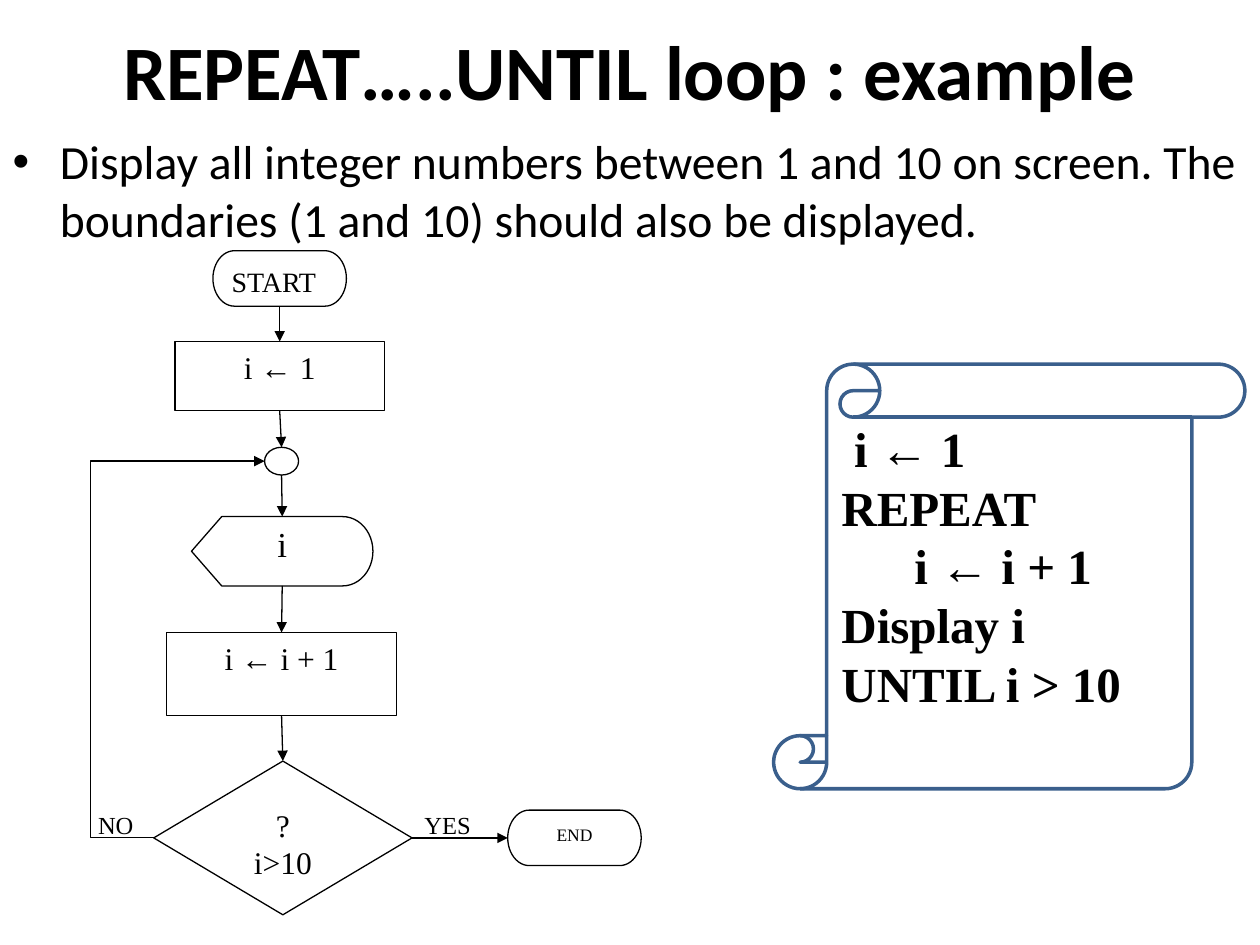
import pptx
import pptx.dml.color
import pptx.enum.shapes
import pptx.enum.text
import pptx.oxml
import pptx.oxml.ns
import pptx.util
from pptx.util import Inches

COLORS = {"ink": "000000", "paper": "FFFFFF", "scroll": "3A5F8C"}
SHAPE = pptx.enum.shapes.MSO_SHAPE
CONNECTOR = pptx.enum.shapes.MSO_CONNECTOR
ALIGN = pptx.enum.text.PP_ALIGN
ANCHOR = pptx.enum.text.MSO_ANCHOR
TOP, LEFT, BOTTOM, RIGHT = range(4)


def color(name):
    return pptx.dml.color.RGBColor.from_string(COLORS[name])


def lengths(box):
    return [Inches(value) for value in box]


def style(para, size, font="Times New Roman", bold=False, align=ALIGN.LEFT):
    para.alignment = align
    para.font.name = font
    para.font.size = pptx.util.Pt(size)
    para.font.bold = bold
    para.font.color.rgb = color("ink")


def add_heading(page, title_box, body_box):
    title, body = page.shapes.title, page.placeholders[1]
    for holder, box in ((title, title_box), (body, body_box)):
        holder.left, holder.top, holder.width, holder.height = lengths(box)
        holder.text_frame.auto_size = pptx.enum.text.MSO_AUTO_SIZE.NONE
    title.text_frame.text = "REPEAT…..UNTIL loop : example"
    title.text_frame.vertical_anchor = ANCHOR.MIDDLE
    style(title.text_frame.paragraphs[0], 44, "Calibri", True, ALIGN.CENTER)
    body.text_frame.text = ("Display all integer numbers between 1 and 10 on screen. "
                            "The boundaries (1 and 10) should also be displayed.")
    style(body.text_frame.paragraphs[0], 27.2, "Calibri")


def add_pseudocode(page, scroll_box, text_box):
    scroll = page.shapes.add_shape(SHAPE.VERTICAL_SCROLL, *lengths(scroll_box))
    scroll.shadow.inherit = False
    scroll.fill.background()
    scroll.line.color.rgb = color("scroll")
    scroll.line.width = pptx.util.Pt(2)

    frame = page.shapes.add_textbox(*lengths(text_box)).text_frame
    frame.word_wrap = True
    lines = [("i ← 1", 0.1), ("REPEAT", 0), ("i ← i + 1", 0.58),
             ("Display i", 0), ("UNTIL i > 10", 0)]
    frame.text = "\n".join(text for text, indent in lines)
    for para, (text, indent) in zip(frame.paragraphs, lines):
        style(para, 28, bold=True)
        para._p.get_or_add_pPr().set("marL", str(Inches(indent)))


def add_node(page, kind, box, text="", size=18, align=ALIGN.CENTER, outlined=True):
    node = page.shapes.add_shape(kind, *lengths(box))
    node.shadow.inherit = False
    node.fill.solid()
    node.fill.fore_color.rgb = color("paper")
    if outlined:
        node.line.color.rgb = color("ink")
        node.line.width = pptx.util.Pt(0.75)
    else:
        node.line.fill.background()
    if text:
        frame = node.text_frame
        frame.vertical_anchor = ANCHOR.TOP
        frame.text = text
        for para in frame.paragraphs:
            style(para, size, align=align)
    return node


def add_arrow(page, start, end, kind=CONNECTOR.STRAIGHT):
    arrow = page.shapes.add_connector(kind, *start, *end)
    arrow.line.color.rgb = color("ink")
    arrow.line.width = pptx.util.Pt(0.75)
    namespace = pptx.oxml.ns.nsdecls("a")
    arrow.line._get_or_add_ln().append(
        pptx.oxml.parse_xml(f'<a:tailEnd {namespace} type="triangle"/>'))
    arrow._element.spPr.append(pptx.oxml.parse_xml(f"<a:effectLst {namespace}/>"))
    return arrow


def side(node, site):
    """Return the middle of one side of a node."""
    across = {LEFT: 0, RIGHT: node.width}.get(site, node.width // 2)
    down = {TOP: 0, BOTTOM: node.height}.get(site, node.height // 2)
    return node.left + across, node.top + down


def join(page, first, first_site, second, second_site):
    arrow = add_arrow(page, side(first, first_site), side(second, second_site))
    # The round junction numbers its sites differently, so it stays unglued
    if first.auto_shape_type != SHAPE.FLOWCHART_CONNECTOR:
        arrow.begin_connect(first, first_site)
    if second.auto_shape_type != SHAPE.FLOWCHART_CONNECTOR:
        arrow.end_connect(second, second_site)


def add_flowchart(page, left, top):
    def node(kind, x, y, width, height, *text, **options):
        return add_node(page, kind, (left + x, top + y, width, height), *text, **options)

    # Branch labels
    for x, label in ((0, "NO"), (2.59, "YES")):
        node(SHAPE.RECTANGLE, x, 4.39, 0.67, 0.39, label, 14,
             align=ALIGN.LEFT, outlined=False)

    # Steps from top to bottom
    start = node(SHAPE.FLOWCHART_TERMINATOR, 1.01, 0, 1.06, 0.44, "START", 16,
                 align=ALIGN.LEFT)
    assign = node(SHAPE.FLOWCHART_PROCESS, 0.71, 0.72, 1.66, 0.55, "i ← 1")
    junction = node(SHAPE.FLOWCHART_CONNECTOR, 1.42, 1.56, 0.27, 0.22)
    display = node(SHAPE.FLOWCHART_DISPLAY, 0.84, 2.11, 1.44, 0.55, "i", 20)
    increment = node(SHAPE.FLOWCHART_PROCESS, 0.64, 3.03, 1.83, 0.66, "i ← i + 1")
    decision = node(SHAPE.FLOWCHART_DECISION, 0.54, 4.05, 2.05, 1.22, "?\ni>10")
    end = node(SHAPE.FLOWCHART_TERMINATOR, 3.35, 4.44, 1.06, 0.44, "END", 10)

    # Downward flow and exit
    steps = [start, assign, junction, display, increment, decision]
    for upper, lower in zip(steps, steps[1:]):
        join(page, upper, BOTTOM, lower, TOP)
    join(page, decision, RIGHT, end, LEFT)

    # Loop back, bending half an inch left of the decision
    loop = add_arrow(page, side(decision, LEFT), side(junction, LEFT), CONNECTOR.ELBOW)
    bend = round(-100000 * Inches(0.5) / loop.width)
    geometry = loop._element.spPr.find(pptx.oxml.ns.qn("a:prstGeom"))
    for old in list(geometry):
        geometry.remove(old)
    geometry.append(pptx.oxml.parse_xml(
        f'<a:avLst {pptx.oxml.ns.nsdecls("a")}><a:gd name="adj1" fmla="val {bend}"/></a:avLst>'))


def main():
    deck = pptx.Presentation()
    deck.slide_width, deck.slide_height = Inches(10), Inches(7.5)
    page = deck.slides.add_slide(deck.slide_layouts[1])
    add_heading(page, (0, -0.07, 10, 1.25), (0, 1, 10, 1.09))
    add_pseudocode(page, (6.14, 2.89, 3.74, 3.37), (6.58, 3.27, 2.8, 3.87))
    add_flowchart(page, 0.68, 1.99)
    deck.save("out.pptx")


if __name__ == "__main__":
    main()
